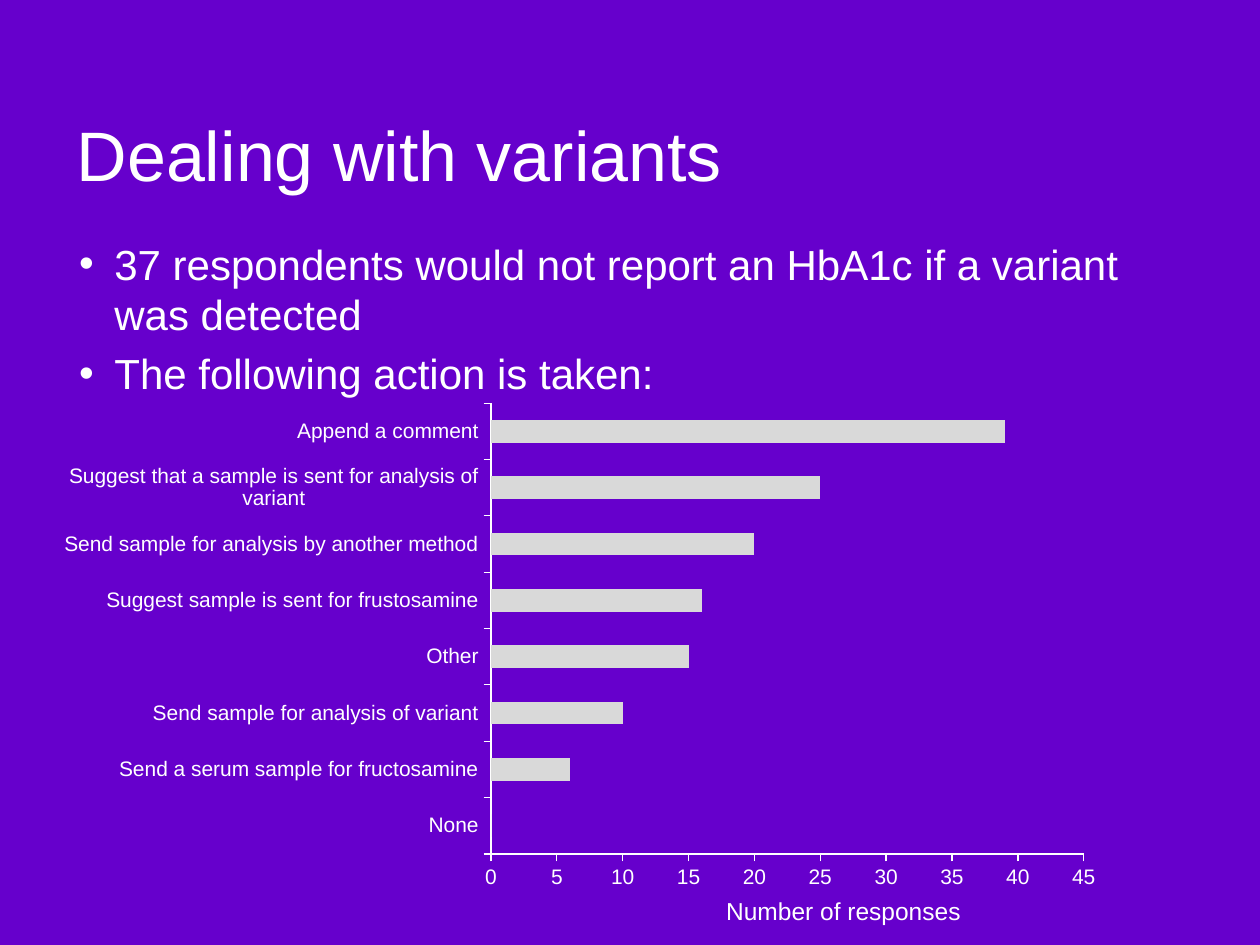
"""Build the slide on how laboratories deal with variants."""
from dataclasses import dataclass

from lxml import etree
from pptx import Presentation
from pptx import util as u
from pptx.chart.data import CategoryChartData
from pptx.dml.color import RGBColor
from pptx.enum import chart as kinds, text
from pptx.oxml import parse_xml
from pptx.oxml.ns import nsdecls, qn


@dataclass(frozen=True)
class Theme:
    """Colours, fonts and type sizes."""
    ground: RGBColor = RGBColor(0x66, 0x00, 0xCC)
    ink: RGBColor = RGBColor(0xFF, 0xFF, 0xFF)
    bar: RGBColor = RGBColor(0xD9, 0xD9, 0xD9)
    font: str = "Arial"
    chart_font: str = "Vollkorn"
    title: int = 40
    body: int = 24
    caption: int = 14
    axis: int = 12
    chart: int = 10


THEME = Theme()
WIDTH, HEIGHT = 10, 7.5
LEFT = 0.51
BULLETS = (
    "37 respondents would not report an HbA1c if a variant was detected",
    "The following action is taken:",
)
RESPONSES = {
    "None": 0,
    "Send a serum sample for fructosamine": 6,
    "Send sample for analysis of variant": 10,
    "Other": 15,
    "Suggest sample is sent for frustosamine": 16,
    "Send sample for analysis by another method": 20,
    "Suggest that a sample is sent for analysis of variant": 25,
    "Append a comment": 39,
}
PLOT_SHARES = {"x": 0.404, "y": 0.02, "w": 0.565, "h": 0.89}


def style_font(font, size, name=THEME.font):
    """Set the size, face and ink colour of a font."""
    font.size, font.name = u.Pt(size), name
    font.color.rgb = THEME.ink


def add_text(page, area, lines, size, anchor, align=text.PP_ALIGN.LEFT):
    """Add a wrapping text box with one paragraph per line."""
    box = page.shapes.add_textbox(*map(u.Inches, area))
    frame = box.text_frame
    frame.word_wrap, frame.vertical_anchor = True, anchor
    for index, line in enumerate(lines):
        para = frame.add_paragraph() if index else frame.paragraphs[0]
        para.alignment = align
        span = para.add_run()
        span.text = line
        style_font(span.font, size)
    return box


def add_bullets(box):
    """Give every paragraph of a box a hanging bullet and a gap above."""
    for para in box.text_frame.paragraphs:
        para.space_before = u.Pt(0.2 * THEME.body)
        props = para._p.get_or_add_pPr()
        props.set("marL", str(u.Inches(0.3)))
        props.set("indent", str(u.Inches(-0.28)))
        etree.SubElement(props, qn("a:buFont")).set("typeface", THEME.font)
        etree.SubElement(props, qn("a:buChar")).set("char", "•")


def style_axis(axis):
    """Show an axis as a plain line with outer ticks."""
    axis.has_major_gridlines = False
    axis.major_tick_mark = kinds.XL_TICK_MARK.OUTSIDE
    axis.minor_tick_mark = kinds.XL_TICK_MARK.NONE
    axis.format.line.color.rgb = THEME.ink
    style_font(axis.tick_labels.font, THEME.axis)


def place_plot(chart, shares):
    """Fix the inner plot area as shares of the chart's size."""
    area = chart._chartSpace.chart.plotArea
    for old in area.findall(qn("c:layout")):
        area.remove(old)
    modes = "".join(f'<c:{key}Mode val="edge"/>' for key in "xy")
    sizes = "".join(f'<c:{key} val="{share}"/>' for key, share in shares.items())
    area.insert(0, parse_xml(
        f'<c:layout {nsdecls("c")}><c:manualLayout><c:layoutTarget val="inner"/>'
        f"{modes}{sizes}</c:manualLayout></c:layout>"))


def add_bars(page, area, values):
    """Add the horizontal bar chart of responses."""
    data = CategoryChartData(number_format="General")
    data.categories = list(values)
    data.add_series("Series 1", list(values.values()))
    chart = page.shapes.add_chart(
        kinds.XL_CHART_TYPE.BAR_CLUSTERED, *map(u.Inches, area), data).chart
    chart.has_legend = chart.has_title = False
    style_font(chart.font, THEME.chart, THEME.chart_font)
    style_axis(chart.category_axis)
    style_axis(chart.value_axis)
    scale = chart.value_axis
    scale.minimum_scale, scale.maximum_scale, scale.major_unit = 0, 45, 5
    plot = chart.plots[0]
    plot.gap_width, plot.vary_by_categories = 150, False
    fill = plot.series[0].format.fill
    fill.solid()
    fill.fore_color.rgb = THEME.bar
    place_plot(chart, PLOT_SHARES)


def main():
    """Build and save the slide."""
    deck = Presentation()
    deck.slide_width, deck.slide_height = u.Inches(WIDTH), u.Inches(HEIGHT)
    page = deck.slides.add_slide(deck.slide_layouts[6])
    page.background.fill.solid()
    page.background.fill.fore_color.rgb = THEME.ground
    body = add_text(page, (LEFT, 0.1 * HEIGHT, 8.74, 4), BULLETS,
                    THEME.body, text.MSO_ANCHOR.MIDDLE)
    body.text_frame.margin_bottom = u.Inches(0.5)
    add_bullets(body)
    add_text(page, (LEFT, 0.08 * HEIGHT, 8.25, 1), ["Dealing with variants"],
             THEME.title, text.MSO_ANCHOR.BOTTOM)
    add_bars(page, (LEFT, 3.12, 8.35, 4.02), RESPONSES)
    add_text(page, (5.16, 7.06, 3.07, 0.34), ["Number of responses"],
             THEME.caption, text.MSO_ANCHOR.TOP, text.PP_ALIGN.CENTER)
    deck.save("out.pptx")


if __name__ == "__main__":
    main()
